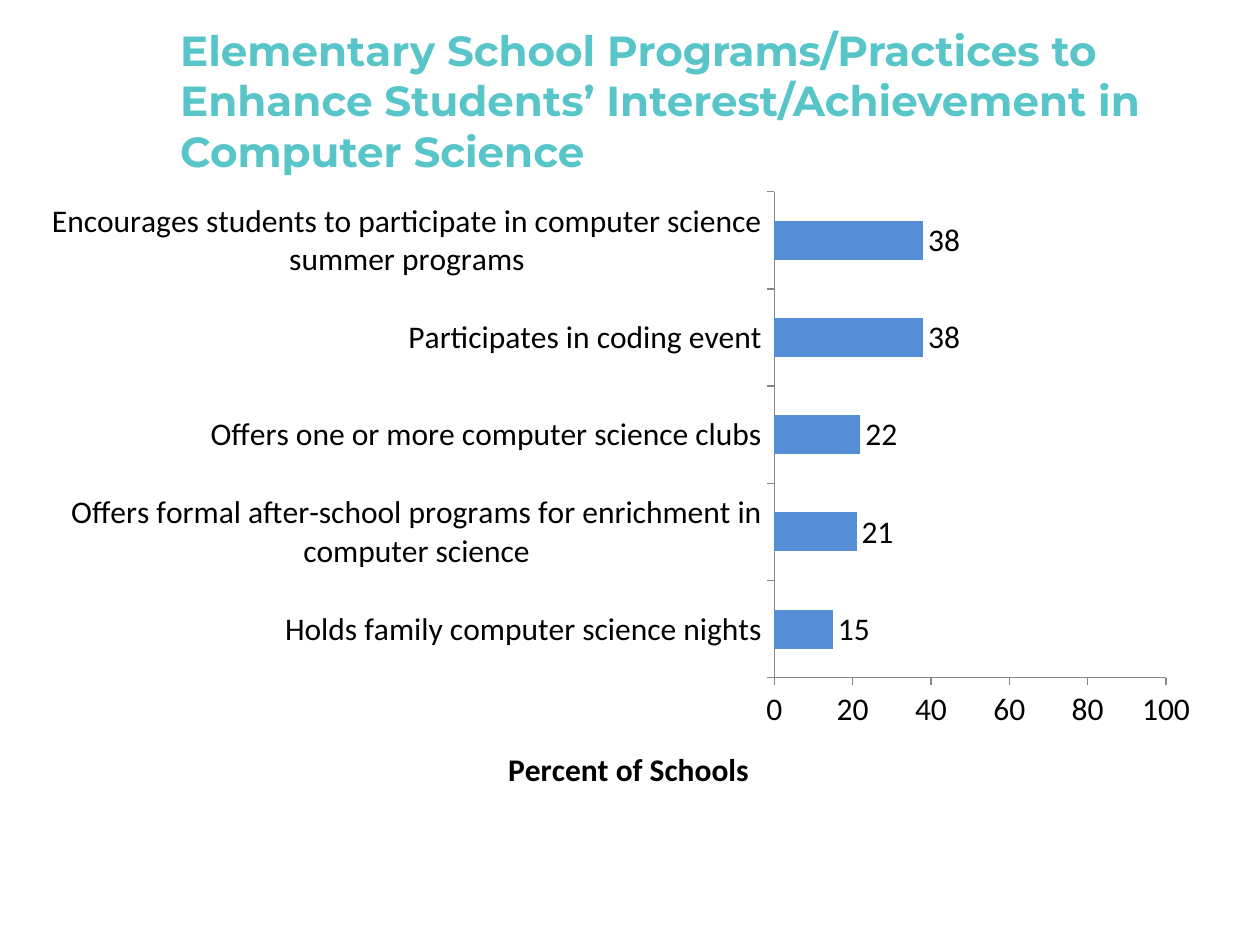
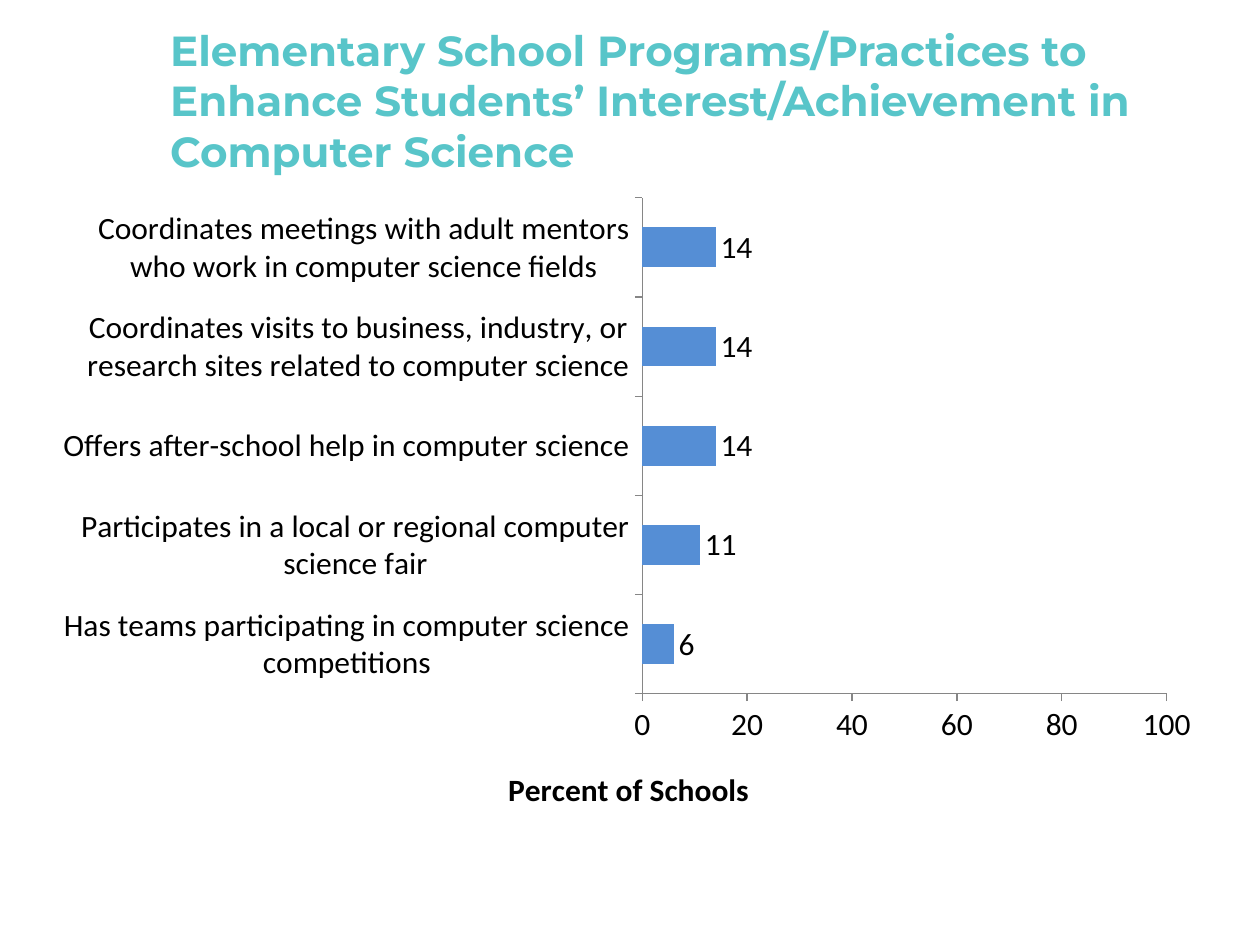
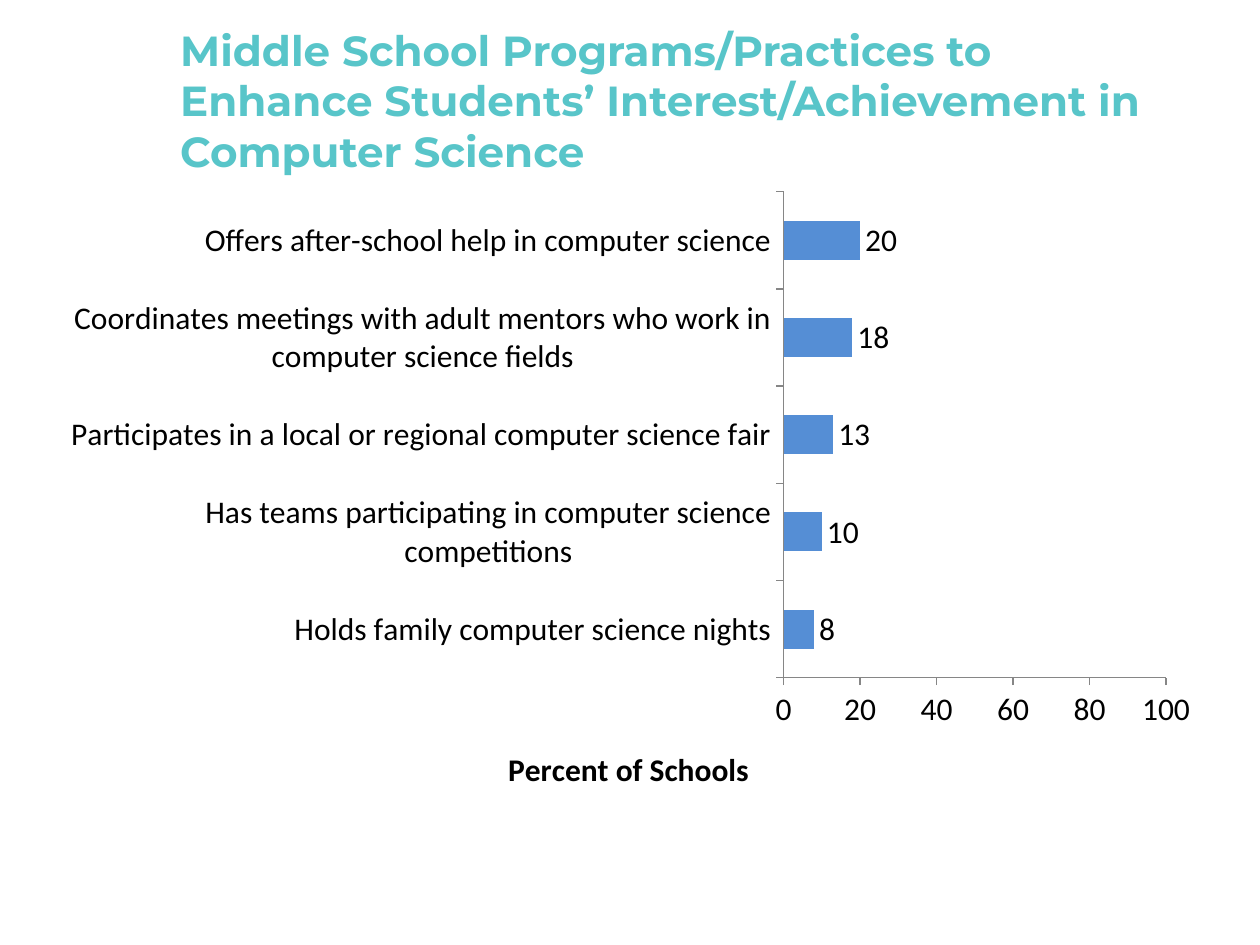
from dataclasses import dataclass
from lxml.etree import SubElement
from pptx import Presentation
from pptx.chart.data import CategoryChartData
from pptx.dml.color import RGBColor
from pptx.enum.chart import XL_CHART_TYPE, XL_LABEL_POSITION, XL_TICK_LABEL_POSITION, XL_TICK_MARK
from pptx.enum.text import MSO_ANCHOR, MSO_AUTO_SIZE, PP_ALIGN
from pptx.oxml.ns import qn
from pptx.util import Inches, Pt


@dataclass(frozen=True)
class Theme:
    heading: RGBColor = RGBColor(0x58, 0xC5, 0xC9)
    bar: RGBColor = RGBColor(0x55, 0x8E, 0xD5)
    axis: RGBColor = RGBColor(0x86, 0x86, 0x86)
    text: RGBColor = RGBColor(0, 0, 0)
    heading_font: str = "Montserrat"
    chart_font: str = "Calibri"
    heading_size: Pt = Pt(24)
    chart_size: Pt = Pt(18)
    axis_width: Pt = Pt(0.75)


THEME = Theme()
CHART_BOX = (0.38, 1.42, 9.25, 5.08)
HEADING_TOP, HEADING_RIGHT, HEADING_HEIGHT = 0.17, 9.5, 1.25
HEADING = "{} School Programs/Practices to Enhance Students’ Interest/Achievement in Computer Science"

FAMILY_NIGHTS = "Holds family computer science nights"
TEAMS = "Has teams participating in computer science competitions"
FAIR = "Participates in a local or regional computer science fair"
HELP = "Offers after-school help in computer science"
MENTORS = "Coordinates meetings with adult mentors who work in computer science fields"

SLIDES = [
    {
        "level": "Elementary",
        "heading_left": 1.33,
        "practices": {
            FAMILY_NIGHTS: 15,
            "Offers formal after-school programs for enrichment in computer science": 21,
            "Offers one or more computer science clubs": 22,
            "Participates in coding event": 38,
            "Encourages students to participate in computer science summer programs": 38,
        },
        "caption_at": {"x": 0.39, "y": 0.88},
    },
    {
        "level": "Elementary",
        "heading_left": 1.25,
        "practices": {
            TEAMS: 6,
            FAIR: 11,
            HELP: 14,
            "Coordinates visits to business, industry, or research sites related to computer science": 14,
            MENTORS: 14,
        },
        "caption_at": {"x": 0.39, "y": 0.93},
        "plot_at": {"x": 0.51, "y": 0.03, "w": 0.45, "h": 0.79},
    },
    {
        "level": "Middle",
        "heading_left": 1.33,
        "practices": {FAMILY_NIGHTS: 8, TEAMS: 10, FAIR: 13, MENTORS: 18, HELP: 20},
        "caption_at": {"x": 0.39, "y": 0.88},
    },
]


def apply(target, values):
    for name, value in values.items():
        setattr(target, name, value)


def format_font(font, color, values):
    apply(font, values)
    font.color.rgb = color


def set_layout(parent, index, place, inner=False):
    layout = parent.find(qn("c:layout"))
    if layout is None:
        layout = parent.makeelement(qn("c:layout"))
        parent.insert(index, layout)
    manual = SubElement(layout, qn("c:manualLayout"))
    settings = {"layoutTarget": "inner"} if inner else {}
    settings.update({"xMode": "edge", "yMode": "edge"}, **place)
    for tag, value in settings.items():
        SubElement(manual, qn(f"c:{tag}")).set("val", str(value))


def add_heading(slide, level, box):
    heading = slide.shapes.title
    apply(heading, dict(zip(("left", "top", "width", "height"), map(Inches, box))))
    frame = heading.text_frame
    frame.text = HEADING.format(level)
    apply(frame, {"word_wrap": True, "auto_size": MSO_AUTO_SIZE.NONE,
                  "vertical_anchor": MSO_ANCHOR.MIDDLE})
    line = frame.paragraphs[0]
    line.alignment = PP_ALIGN.LEFT
    format_font(line.runs[0].font, THEME.heading,
                {"name": THEME.heading_font, "size": THEME.heading_size, "bold": True})


def format_axes(chart):
    for axis in (chart.category_axis, chart.value_axis):
        apply(axis, {"has_major_gridlines": False, "major_tick_mark": XL_TICK_MARK.OUTSIDE,
                     "minor_tick_mark": XL_TICK_MARK.NONE,
                     "tick_label_position": XL_TICK_LABEL_POSITION.NEXT_TO_AXIS})
        axis.format.line.color.rgb = THEME.axis
        axis.format.line.width = THEME.axis_width
    apply(chart.value_axis, {"minimum_scale": 0, "maximum_scale": 100, "major_unit": 20})


def add_practices_chart(slide, practices, box, caption_at, plot_at=None):
    data = CategoryChartData()
    data.categories = list(practices)
    data.add_series("Series 1", list(practices.values()))
    chart = slide.shapes.add_chart(XL_CHART_TYPE.BAR_CLUSTERED, *map(Inches, box), data).chart
    apply(chart, {"has_legend": False, "has_title": False})
    chart_text = {"name": THEME.chart_font, "size": THEME.chart_size}
    format_font(chart.font, THEME.text, chart_text)
    format_axes(chart)

    plot = chart.plots[0]
    apply(plot, {"gap_width": 150, "vary_by_categories": False, "has_data_labels": True})
    apply(plot.data_labels, {"show_value": True, "position": XL_LABEL_POSITION.OUTSIDE_END})
    bars = plot.series[0].format.fill
    bars.solid()
    bars.fore_color.rgb = THEME.bar

    caption = chart.value_axis.axis_title
    caption.text_frame.text = "Percent of Schools"
    format_font(caption.text_frame.paragraphs[0].runs[0].font, THEME.text,
                {**chart_text, "bold": True})
    set_layout(caption._element, 1, caption_at)
    if plot_at:
        set_layout(chart._chartSpace.chart.plotArea, 0, plot_at, inner=True)


def add_practices_slide(deck, level, heading_left, practices, **layout):
    slide = deck.slides.add_slide(deck.slide_layouts.get_by_name("Title Only"))
    add_practices_chart(slide, practices, CHART_BOX, **layout)
    add_heading(slide, level,
                (heading_left, HEADING_TOP, HEADING_RIGHT - heading_left, HEADING_HEIGHT))


def main():
    deck = Presentation()
    apply(deck, {"slide_width": Inches(10), "slide_height": Inches(7.5)})
    for content in SLIDES:
        add_practices_slide(deck, **content)
    deck.save("out.pptx")


if __name__ == "__main__":
    main()
